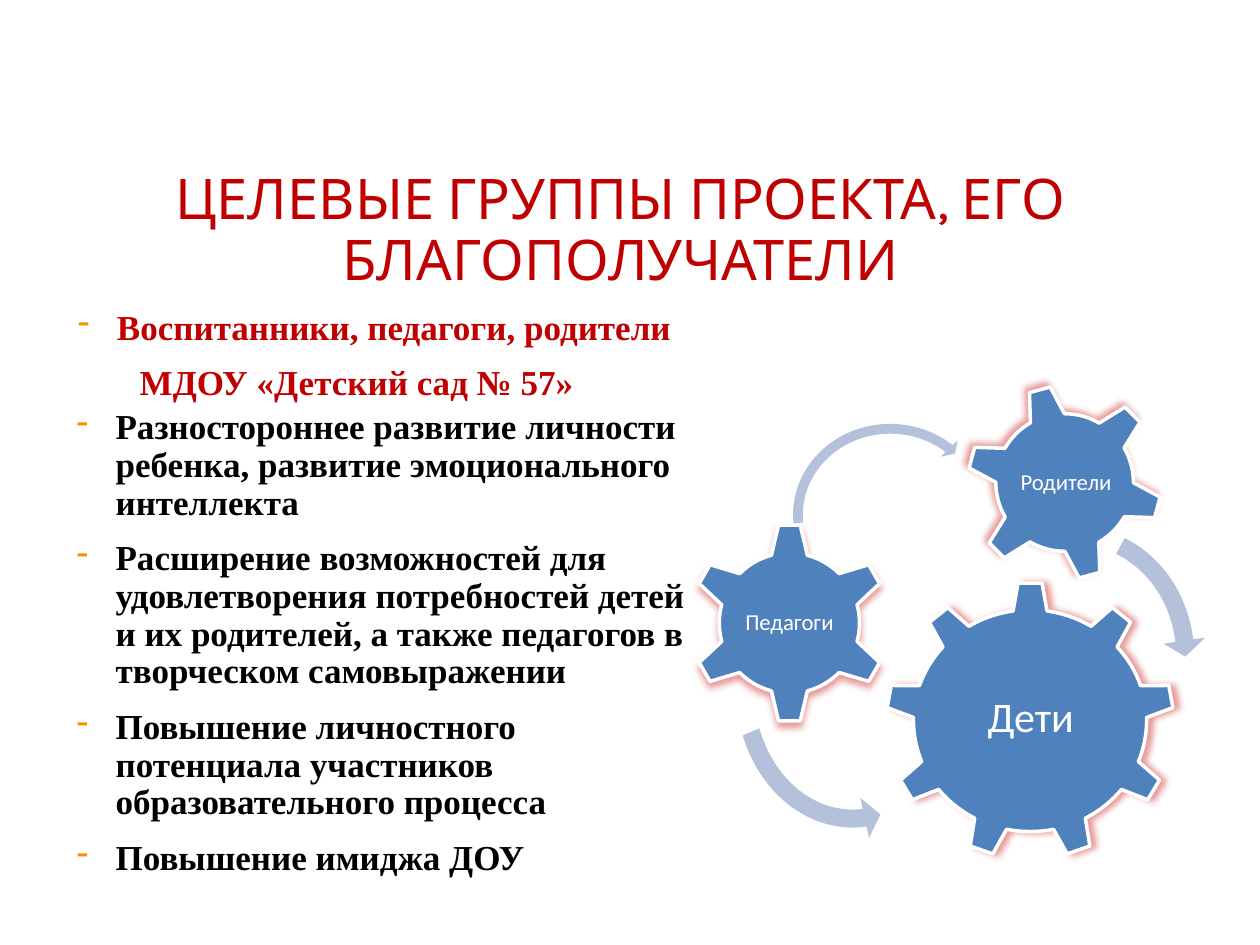
from lxml import etree
from pptx import Presentation
from pptx.dml.color import RGBColor
from pptx.enum.shapes import MSO_SHAPE
from pptx.enum.text import MSO_ANCHOR, MSO_AUTO_SIZE, PP_ALIGN
from pptx.oxml.ns import qn
from pptx.util import Inches, Pt

GEAR_6, GEAR_9 = MSO_SHAPE.GEAR_6, MSO_SHAPE.GEAR_9
ARROW, LEFT_ARROW = MSO_SHAPE.CIRCULAR_ARROW, MSO_SHAPE.LEFT_CIRCULAR_ARROW
CENTER, MIDDLE = PP_ALIGN.CENTER, MSO_ANCHOR.MIDDLE
GROW = MSO_AUTO_SIZE.SHAPE_TO_FIT_TEXT

RED, BLACK, WHITE = "C00000", "000000", "FFFFFF"
GEAR_BLUE, ARROW_BLUE, DASH_ORANGE = "4F81BD", "B3C1DB", "F69200"
SERIF = "Times New Roman"
HANGING = 0.31

TITLE = "ЦЕЛЕВЫЕ ГРУППЫ ПРОЕКТА, ЕГО БЛАГОПОЛУЧАТЕЛИ"
AUDIENCE = "Воспитанники, педагоги, родители"
KINDERGARTEN = "МДОУ «Детский сад № 57»"
GOALS = [
    "Разностороннее развитие личности ребенка, развитие эмоционального интеллекта",
    "Расширение возможностей для удовлетворения потребностей детей и их родителей, "
    "а также педагогов в творческом самовыражении",
    "Повышение личностного потенциала участников образовательного процесса",
    "Повышение имиджа ДОУ",
]
# label, size, gear, gear place, rotation, shadow direction, label place
GEARS = [
    ("Дети", 24, GEAR_9, (7.03, 4.62, 2.29, 2.2), 0, 0, (7.49, 5.14, 1.38, 1.13)),
    ("Педагоги", 13, GEAR_6, (5.47, 4.15, 1.59, 1.59), 0, 90, (5.87, 4.55, 0.79, 0.79)),
    ("Родители", 13, GEAR_6, (7.67, 3.05, 1.56, 1.56), 345, 225, (8.02, 3.39, 0.88, 0.88)),
]
# arrow, place, rotation, adjustments
ARROWS = [
    (ARROW, (6.29, 3.26, 1.55, 1.65), 270, (0.05, 2.99, 25.02, 158.93, 0.06)),
    (LEFT_ARROW, (5.58, 4.45, 2.38, 2.04), 270, (0.07, 4.3, 104.89, 148.38, 0.08)),
    (ARROW, (6.99, 4.18, 2.69, 2.38), 123.1, (0.06, 3.94, 133.14, 105.08, 0.07)),
]


def rgb(color):
    return RGBColor.from_string(color)


def add_frame(shapes, place):
    frame = shapes.add_textbox(*map(Inches, place)).text_frame
    frame.word_wrap = True
    return frame


def write(frame, text, size, font, color, bold=False, align=None, dash=False, indent=0):
    """Add a paragraph, using the empty first one when the frame is new."""
    first = not frame.paragraphs[0].runs
    paragraph = frame.paragraphs[0] if first else frame.add_paragraph()
    paragraph.line_spacing = 0.9
    if not first:
        paragraph.space_before = Pt(10)
    if align is not None:
        paragraph.alignment = align
    properties = paragraph._p.get_or_add_pPr()
    if dash:
        properties.set("marL", str(Inches(HANGING)))
        properties.set("indent", str(-Inches(HANGING)))
        dash_color = etree.SubElement(properties, qn("a:buClr"))
        etree.SubElement(dash_color, qn("a:srgbClr"), val=DASH_ORANGE)
        etree.SubElement(properties, qn("a:buChar"), char="-")
    elif indent:
        properties.set("marL", str(Inches(indent)))
    run = paragraph.add_run()
    run.text = text
    run.font.size = Pt(size)
    run.font.name = font
    run.font.bold = bold
    run.font.color.rgb = rgb(color)


def add_part(shapes, kind, place, rotation, fill):
    part = shapes.add_shape(kind, *map(Inches, place))
    part.rotation = rotation
    part.shadow.inherit = False
    part.fill.solid()
    part.fill.fore_color.rgb = rgb(fill)
    return part


def add_glow_shadow(part, direction):
    effects = part._element.spPr.find(qn("a:effectLst"))
    shadow = etree.SubElement(
        effects, qn("a:outerShdw"), blurRad=str(Pt(4)), dist=str(Pt(3)),
        dir=str(direction * 60000), rotWithShape="0")
    color = etree.SubElement(shadow, qn("a:srgbClr"), val=RED)
    etree.SubElement(color, qn("a:alpha"), val="40000")


def add_gear(shapes, label, size, kind, place, rotation, direction, label_place):
    gear = add_part(shapes, kind, place, rotation, GEAR_BLUE)
    gear.line.color.rgb = rgb(WHITE)
    gear.line.width = Pt(2)
    add_glow_shadow(gear, direction)
    frame = add_frame(shapes, label_place)
    frame.vertical_anchor = MIDDLE
    frame.margin_left = frame.margin_right = Inches(0.02)
    frame.margin_top = frame.margin_bottom = Inches(0.02)
    write(frame, label, size, "Calibri", WHITE, align=CENTER)


def add_arrow(shapes, kind, place, rotation, adjustments):
    arrow = add_part(shapes, kind, place, rotation, ARROW_BLUE)
    arrow.line.fill.background()
    for index, value in enumerate(adjustments):
        arrow.adjustments[index] = value


def main():
    prs = Presentation()
    prs.slide_width, prs.slide_height = Inches(10), Inches(7.5)
    slide = prs.slides.add_slide(prs.slide_layouts[6])

    heading = add_frame(slide.shapes, (0.52, 1.31, 8.81, 3.17))
    heading.auto_size = GROW
    write(heading, TITLE, 32, "Karla", RED, align=CENTER)
    write(heading, AUDIENCE, 20, SERIF, RED, bold=True, dash=True)
    write(heading, KINDERGARTEN, 20, SERIF, RED, bold=True, indent=0.49)

    diagram = slide.shapes.add_group_shape().shapes
    for gear in GEARS:
        add_gear(diagram, *gear)
    for arrow in ARROWS:
        add_arrow(diagram, *arrow)

    goals = add_frame(slide.shapes, (0.51, 3.2, 5.03, 4.59))
    goals.auto_size = GROW
    for goal in GOALS:
        write(goals, goal, 20, SERIF, BLACK, bold=True, dash=True)

    prs.save("out.pptx")


if __name__ == "__main__":
    main()
